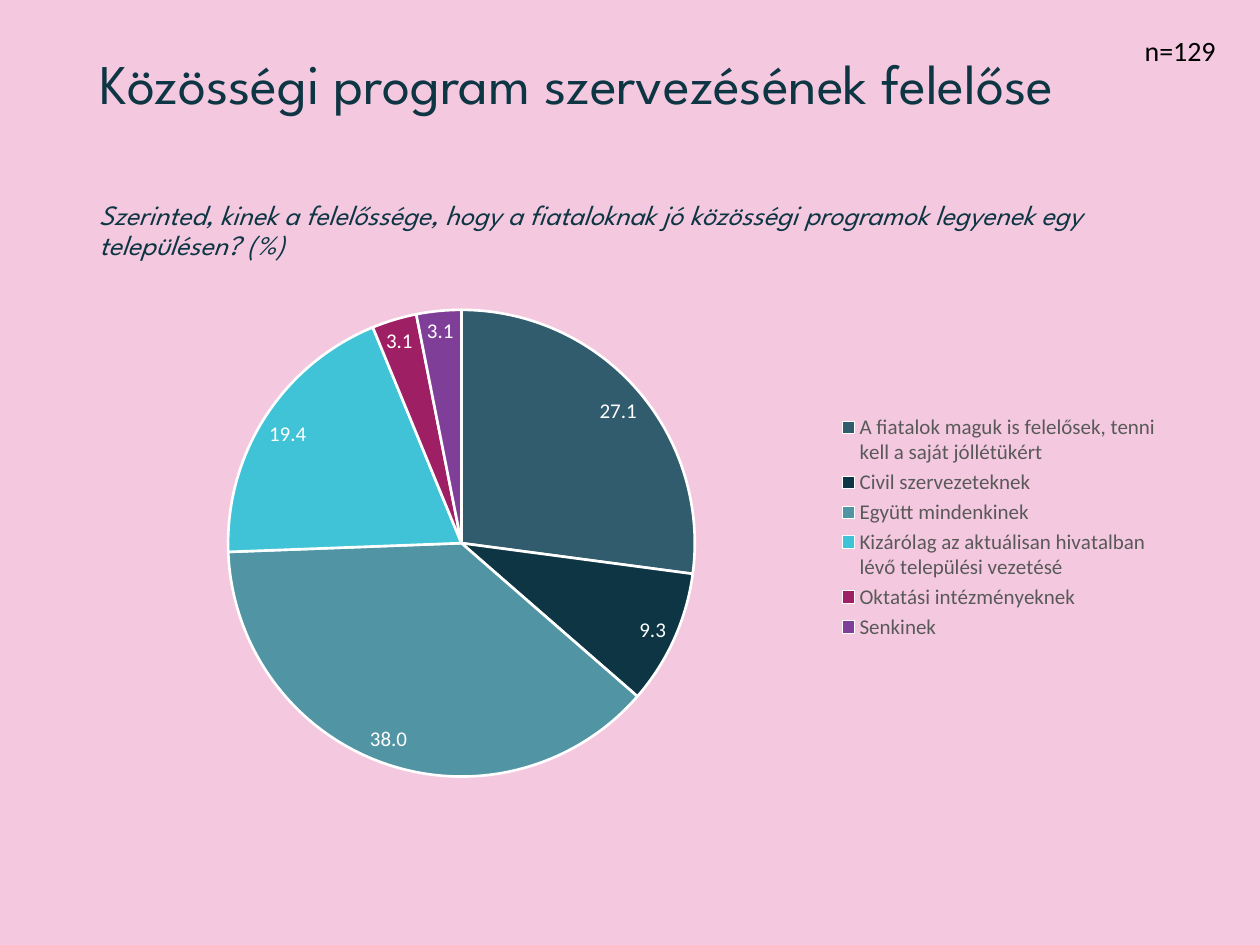
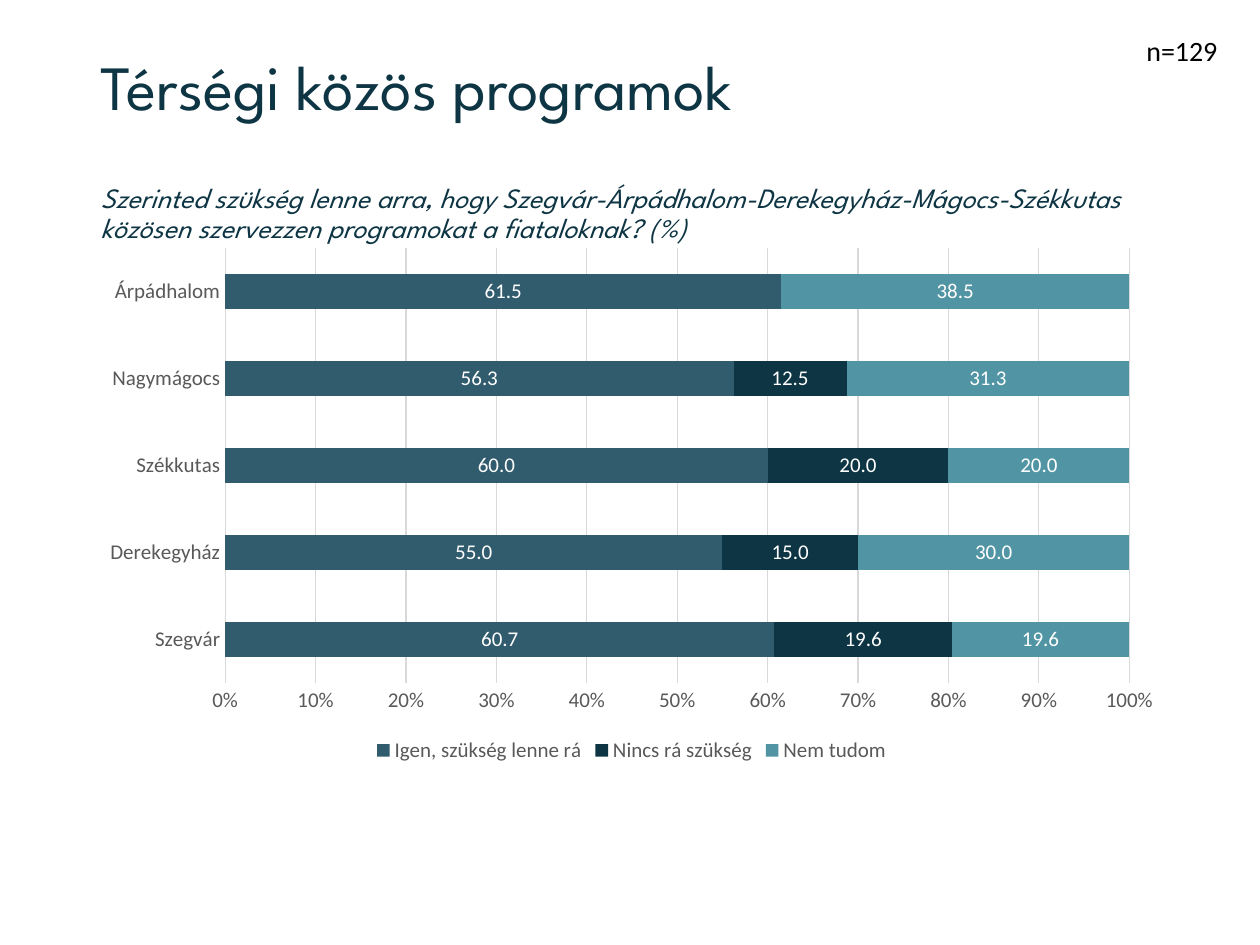
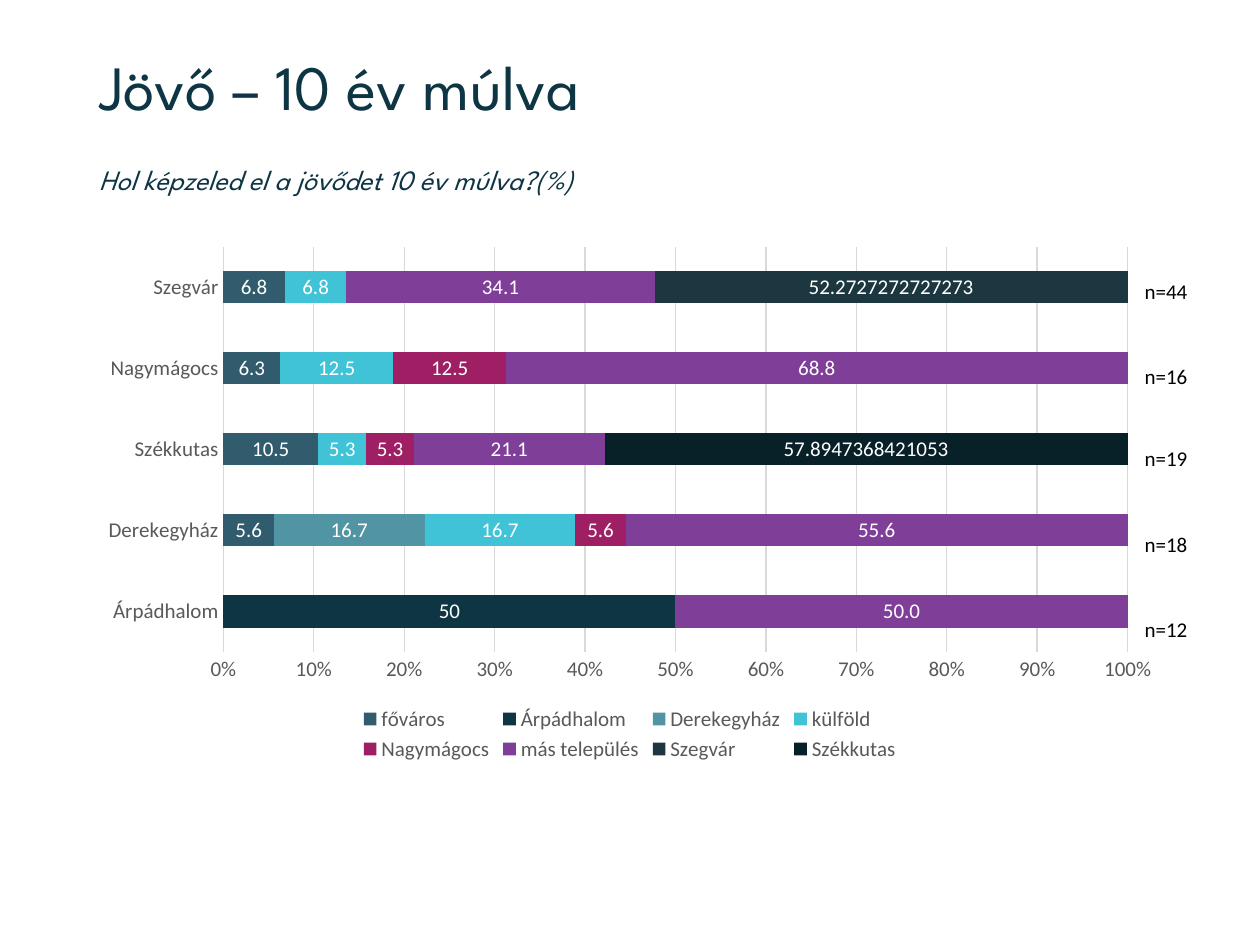
import pptx
import pptx.chart.data
import pptx.dml.color
import pptx.enum.chart
import pptx.enum.text
import pptx.util
from lxml import etree

Pt = pptx.util.Pt
CT = pptx.enum.chart.XL_CHART_TYPE
LP = pptx.enum.chart.XL_LABEL_POSITION
LEG = pptx.enum.chart.XL_LEGEND_POSITION

THEME = {
    "heading_font": "League Spartan", "body_font": "Calibri",
    "ink": "0E3543", "black": "000000", "white": "FFFFFF", "grey": "595959",
    "grid": "D9D9D9", "pink": "F4C9E0",
    "title": 36, "long_title": 32, "text": 16, "small": 12,
    "palette": ["315C6D", "0E3543", "5195A4", "40C3D6",
                "9E1F63", "7F3F98", "1D3741", "082028"],
}

WIDTH, CHART_HEIGHT, N_OFFSET = 620.6, 303.1, 597.4

SLIDES = [
    {
        "title": "Közösségi program szervezésének felelőse",
        "title_size": "long_title", "background": "pink", "left": 49.6,
        "question": "Szerinted, kinek a felelőssége, hogy a fiataloknak jó közösségi "
                    "programok legyenek egy településen? (%)",
        "question_top": 111.6, "chart_top": 149.8, "sample": "n=129",
        "type": CT.PIE,
        "categories": ["A fiatalok maguk is felelősek, tenni kell a saját jóllétükért",
                       "Civil szervezeteknek", "Együtt mindenkinek",
                       "Kizárólag az aktuálisan hivatalban lévő települési vezetésé",
                       "Oktatási intézményeknek", "Senkinek"],
        "series": [("Series 1", [27.1, 9.3, 38, 19.4, 3.1, 3.1], "0.0")],
    },
    {
        "title": "Térségi közös programok",
        "title_size": "title", "background": "white", "left": 50.6,
        "question": "Szerinted szükség lenne arra, hogy Szegvár-Árpádhalom-Derekegyház-"
                    "Mágocs-Székkutas közösen szervezzen programokat a fiataloknak? (%)",
        "question_top": 101.8, "chart_top": 135.7, "sample": "n=129",
        "type": CT.BAR_STACKED_100,
        "categories": ["Szegvár", "Derekegyház", "Székkutas", "Nagymágocs", "Árpádhalom"],
        "series": [
            ("Igen, szükség lenne rá", [60.7, 55, 60, 56.3, 61.5], "0.0"),
            ("Nincs rá szükség", [19.6, 15, 20, 12.5, None], "0.0"),
            ("Nem tudom", [19.6, 30, 20, 31.3, 38.5], "0.0"),
        ],
    },
    {
        "title": "Jövő – 10 év múlva",
        "title_size": "title", "background": "white", "left": 49.6,
        "question": "Hol képzeled el a jövődet 10 év múlva?(%)",
        "question_top": 91.4, "chart_top": 134.9,
        "row_samples": [("n=44", 155.5), ("n=16", 204.5), ("n=19", 251.3),
                        ("n=18", 300.2), ("n=12", 348.7)],
        "type": CT.BAR_STACKED_100,
        "categories": ["Árpádhalom", "Derekegyház", "Székkutas", "Nagymágocs", "Szegvár"],
        "series": [
            ("főváros", [None, 5.6, 10.5, 6.3, 6.8], "0.0"),
            ("Árpádhalom", [50, None, None, None, None], "General"),
            ("Derekegyház", [None, 16.7, None, None, None], "0.0"),
            ("külföld", [None, 16.7, 5.3, 12.5, 6.8], "0.0"),
            ("Nagymágocs", [None, 5.6, 5.3, 12.5, None], "0.0"),
            ("más település", [50, 55.6, 21.1, 68.8, 34.1], "0.0"),
            ("Szegvár", [None, None, None, None, 52.3], "General"),
            ("Székkutas", [None, None, 57.9, None, None], "General"),
        ],
        "long_labels": [(6, 4, "52.2727272727273"), (7, 2, "57.8947368421053")],
    },
]


def rgb(value):
    return pptx.dml.color.RGBColor.from_string(value)


def apply(obj, **values):
    for name, value in values.items():
        setattr(obj, name, value)


def style(font, size, color, face="body_font", **values):
    apply(font, size=Pt(THEME[size]), name=THEME[face], **values)
    font.color.rgb = rgb(THEME[color])


def paint(fill, color):
    fill.solid()
    fill.fore_color.rgb = rgb(color)


def add_text(s, text, box, size, color="black", face="body_font", spacing=None, **values):
    tf = s.shapes.add_textbox(*map(Pt, box)).text_frame
    apply(tf, word_wrap=True, vertical_anchor=pptx.enum.text.MSO_ANCHOR.TOP)
    p = tf.paragraphs[0]
    if spacing:
        p.line_spacing = spacing
    r = p.add_run()
    r.text = text
    style(r.font, size, color, face, **values)


def set_plot_layout(chart, **fractions):
    area = chart.element.chart.plotArea
    for old in area.findall("{*}layout"):
        area.remove(old)
    ns = etree.QName(area).namespace
    layout = pptx.oxml.parse_xml(f'<c:layout xmlns:c="{ns}"><c:manualLayout/></c:layout>')
    area.insert(0, layout)
    settings = {"layoutTarget": "inner", "xMode": "edge", "yMode": "edge", **fractions}
    for tag, value in settings.items():
        etree.SubElement(layout[0], f"{{{ns}}}{tag}").set("val", str(value))


def style_pie(chart):
    chart.plots[0].vary_by_categories = True
    set_plot_layout(chart, x=0.13, y=0.09, w=0.43, h=0.88)
    series = chart.series[0]
    for i, _ in enumerate(series.values):
        fmt = series.points[i].format
        paint(fmt.fill, THEME["palette"][i])
        fmt.line.color.rgb = rgb(THEME["white"])
        fmt.line.width = Pt(1.5)


def style_bars(chart):
    apply(chart.plots[0], vary_by_categories=False, gap_width=150, overlap=100)
    for series, color in zip(chart.series, THEME["palette"]):
        paint(series.format.fill, color)
    none = pptx.enum.chart.XL_TICK_MARK.NONE
    for axis in (chart.category_axis, chart.value_axis):
        apply(axis, major_tick_mark=none, minor_tick_mark=none)
        style(axis.tick_labels.font, "small", "grey")
    chart.value_axis.has_major_gridlines = True
    chart.value_axis.format.line.fill.background()
    apply(chart.value_axis.tick_labels, number_format="0%", number_format_is_linked=False)
    for line in (chart.category_axis.format.line,
                 chart.value_axis.major_gridlines.format.line):
        line.color.rgb = rgb(THEME["grid"])
        line.width = Pt(0.75)


def add_labels(chart, c, position):
    for series, (_, _, number_format) in zip(chart.series, c["series"]):
        labels = series.data_labels
        apply(labels, show_value=True, number_format=number_format,
              number_format_is_linked=False, position=position)
        style(labels.font, "small", "white")
    for row, column, text in c.get("long_labels", []):
        label = chart.series[row].points[column].data_label
        r = label.text_frame.paragraphs[0].add_run()
        r.text = text
        style(r.font, "small", "white")
        label.position = position


def add_chart(s, c):
    data = pptx.chart.data.CategoryChartData()
    data.categories = c["categories"]
    for name, values, number_format in c["series"]:
        data.add_series(name, values, number_format)
    box = map(Pt, (c["left"], c["chart_top"], WIDTH, CHART_HEIGHT))
    chart = s.shapes.add_chart(c["type"], *box, data).chart
    pie = c["type"] == CT.PIE
    apply(chart, has_title=False, has_legend=True)
    apply(chart.font, size=Pt(10), name=THEME["body_font"])
    apply(chart.legend, position=LEG.RIGHT if pie else LEG.BOTTOM, include_in_layout=False)
    style(chart.legend.font, "small", "grey")
    (style_pie if pie else style_bars)(chart)
    add_labels(chart, c, LP.BEST_FIT if pie else LP.CENTER)


def build_slide(prs, c):
    s = prs.slides.add_slide(prs.slide_layouts[6])
    paint(s.background.fill, THEME[c["background"]])
    left = c["left"]
    add_text(s, c["title"], (left, 28.8, WIDTH, 57.6), c["title_size"], "ink",
             "heading_font", 0.9)
    add_chart(s, c)
    add_text(s, c["question"], (left, c["question_top"], 607, 38.9), "text", "ink",
             "heading_font", 0.9, italic=True)
    if "sample" in c:
        add_text(s, c["sample"], (left + N_OFFSET, 15.5, 72.7, 26.6), "text")
    for text, top in c.get("row_samples", []):
        add_text(s, text, (left + N_OFFSET, top, 68.4, 21.6), "small")


def main():
    prs = pptx.Presentation()
    apply(prs, slide_width=Pt(720), slide_height=Pt(540))
    for content in SLIDES:
        build_slide(prs, content)
    prs.save("out.pptx")


if __name__ == "__main__":
    main()
